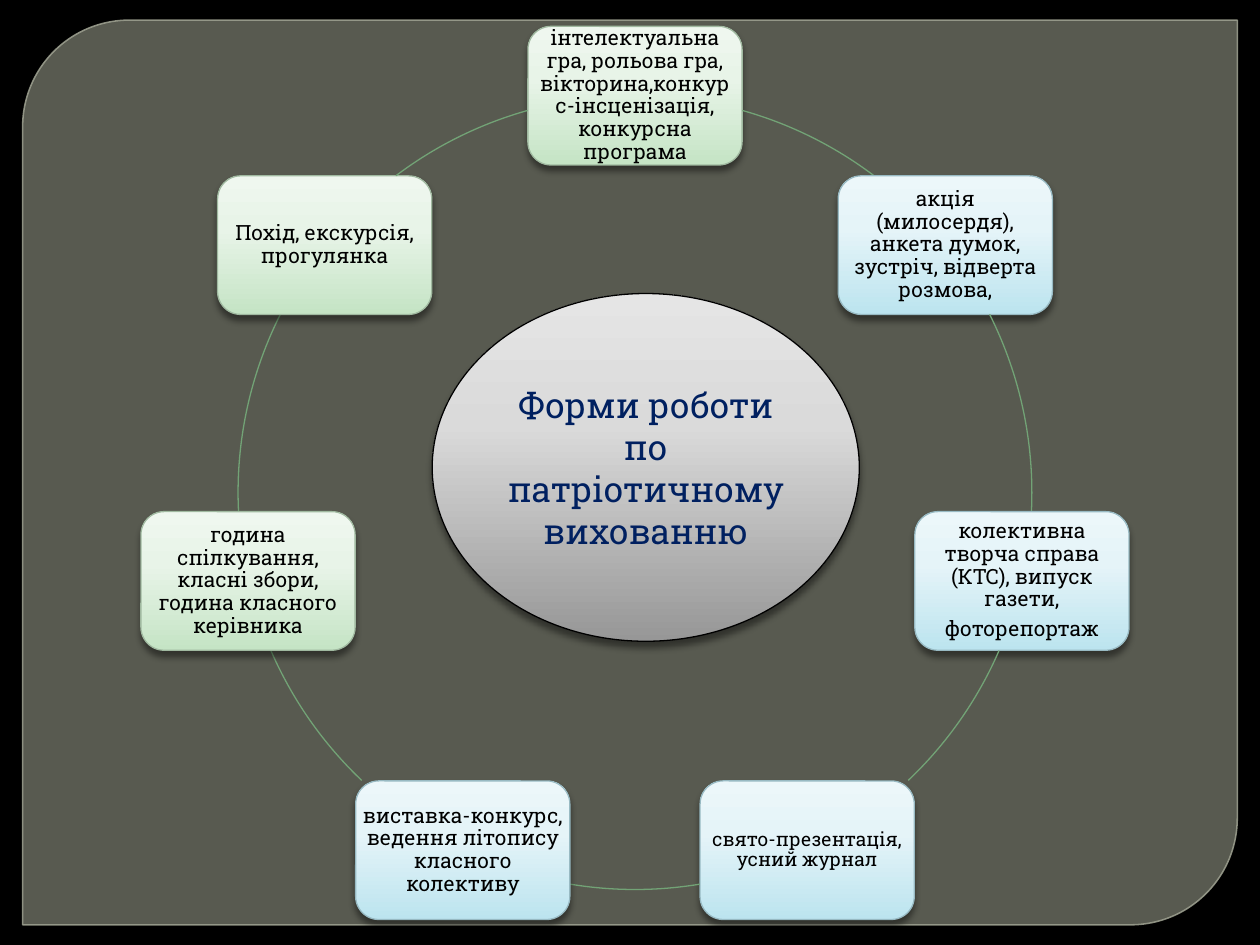
from copy import deepcopy
from math import cos, radians, sin

from pptx import Presentation
from pptx.dml.color import RGBColor
from pptx.enum.shapes import MSO_SHAPE
from pptx.enum.text import MSO_ANCHOR, PP_ALIGN
from pptx.oxml import parse_xml
from pptx.oxml.ns import nsdecls, qn
from pptx.util import Inches, Pt

# Content: node paragraphs, palette and text size, clockwise from the top
CENTER_TEXT = "Форми роботи по патріотичному вихованню"
NODES = [
    (["інтелектуальна гра, рольова гра, вікторина,конкурс-інсценізація, конкурсна програма"], "green", 12),
    (["акція (милосердя), анкета думок, зустріч, відверта розмова,"], "blue", 12),
    (["колективна творча справа (КТС), випуск газети,", "фоторепортаж"], "blue", 12),
    (["свято-презентація, усний журнал"], "blue", 11),
    (["виставка-конкурс, ведення літопису класного колективу"], "blue", 12),
    (["година спілкування, класні збори, година класного керівника"], "green", 12),
    (["Похід, екскурсія, прогулянка"], "green", 12),
]

# Colours and font
FONT = "Roboto Slab"
BLACK = RGBColor(0, 0, 0)
NAVY = RGBColor(0x00, 0x20, 0x60)
RING = RGBColor(0x72, 0xA3, 0x76)
PANEL = RGBColor(0x88, 0x8B, 0x7B)
PANEL_LINE = RGBColor(0x9D, 0xA0, 0x90)
STOP_POSITIONS = (0, 0.62, 1)
GRADIENTS = {  # stops from bottom to top
    "green": (RGBColor(0xC5, 0xE4, 0xC5), RGBColor(0xE8, 0xF4, 0xE8), RGBColor(0xEF, 0xF7, 0xEF)),
    "blue": (RGBColor(0xBC, 0xE4, 0xEF), RGBColor(0xE5, 0xF4, 0xF8), RGBColor(0xEC, 0xF7, 0xFA)),
    "gray": (RGBColor(0x97, 0x97, 0x97), RGBColor(0xDA, 0xDA, 0xDA), RGBColor(0xE5, 0xE5, 0xE5)),
}
LINES = {
    "green": RGBColor(0xA0, 0xB9, 0xA0),
    "blue": RGBColor(0x98, 0xBA, 0xC3),
    "gray": BLACK,
}

# Ring geometry, in inches
CENTER_X, CENTER_Y, RADIUS = 5.04, 3.91, 3.15
NODE_WIDTH, NODE_HEIGHT = 1.7, 1.1
STEP = 360 / len(NODES)


def ring_point(angle):
    """Point on the ring; angles run clockwise from the right."""
    return (CENTER_X + RADIUS * cos(radians(angle)),
            CENTER_Y + RADIUS * sin(radians(angle)))


def leave_node(angle, direction):
    """Angle at which the ring leaves the node centred at the given angle."""
    node_x, node_y = ring_point(angle)
    x, y = node_x, node_y
    while abs(x - node_x) < NODE_WIDTH / 2 and abs(y - node_y) < NODE_HEIGHT / 2:
        angle += 0.1 * direction
        x, y = ring_point(angle)
    return angle


def add_outline(slide, kind, box, line_color, width=0.75):
    shape = slide.shapes.add_shape(kind, *map(Inches, box))
    shape.shadow.inherit = False
    shape.line.color.rgb = line_color
    shape.line.width = Pt(width)
    return shape


def set_alpha(color_format_parent, percent):
    color = next(color_format_parent.iter(qn("a:srgbClr")))
    color.append(parse_xml(f'<a:alpha {nsdecls("a")} val="{percent * 1000}"/>'))


def add_glossy(slide, kind, box, palette):
    shape = add_outline(slide, kind, box, LINES[palette])
    shape.fill.gradient()
    shape.fill.gradient_angle = 90
    stop_list = next(shape._element.spPr.iter(qn("a:gsLst")))
    stop_list.append(deepcopy(stop_list[-1]))
    for stop, position, color in zip(shape.fill.gradient_stops, STOP_POSITIONS, GRADIENTS[palette]):
        stop.position = position
        stop.color.rgb = color
    shape._element.spPr.find(qn("a:effectLst")).append(parse_xml(
        f'<a:outerShdw {nsdecls("a")} blurRad="{Pt(4)}" dist="{Pt(3)}" dir="5400000" rotWithShape="0">'
        '<a:srgbClr val="000000"><a:alpha val="43000"/></a:srgbClr></a:outerShdw>'))
    return shape


def write_text(shape, paragraphs, size, color=BLACK, spacing=1.0, after=0, margin=None):
    frame = shape.text_frame
    frame.word_wrap = True
    frame.vertical_anchor = MSO_ANCHOR.MIDDLE
    if margin is not None:
        frame.margin_left = frame.margin_right = Inches(margin)
        frame.margin_top = frame.margin_bottom = Inches(margin)
    for index, text in enumerate(paragraphs):
        paragraph = frame.add_paragraph() if index else frame.paragraphs[0]
        paragraph.alignment = PP_ALIGN.CENTER
        paragraph.line_spacing = spacing
        paragraph.space_after = Pt(after)
        run = paragraph.add_run()
        run.text = text
        run.font.name = FONT
        run.font.size = Pt(size)
        run.font.color.rgb = color


def main():
    presentation = Presentation()
    presentation.slide_width, presentation.slide_height = Inches(10), Inches(7.5)
    slide = presentation.slides.add_slide(presentation.slide_layouts[6])
    slide.background.fill.solid()
    slide.background.fill.fore_color.rgb = BLACK

    # Translucent backing panel
    panel = add_outline(slide, MSO_SHAPE.ROUND_2_DIAG_RECTANGLE, (0.18, 0.16, 9.64, 7.18), PANEL_LINE, 0.87)
    panel.adjustments[0] = 0.118
    panel.fill.solid()
    panel.fill.fore_color.rgb = PANEL
    set_alpha(panel._element.spPr.find(qn("a:solidFill")), 65)
    set_alpha(panel._element.spPr.find(qn("a:ln")), 88)

    # Nodes, each followed by the arc to the next one
    ring_box = (CENTER_X - RADIUS, CENTER_Y - RADIUS, 2 * RADIUS, 2 * RADIUS)
    for index, (paragraphs, palette, size) in enumerate(NODES):
        angle = -90 + index * STEP
        x, y = ring_point(angle)
        box = (x - NODE_WIDTH / 2, y - NODE_HEIGHT / 2, NODE_WIDTH, NODE_HEIGHT)
        node = add_glossy(slide, MSO_SHAPE.ROUNDED_RECTANGLE, box, palette)
        write_text(node, paragraphs, size, spacing=0.9, after=4, margin=0)

        arc = add_outline(slide, MSO_SHAPE.ARC, ring_box, RING)
        arc.fill.background()
        ends = (leave_node(angle, 1), leave_node(angle + STEP, -1))
        for position, end in enumerate(ends):
            arc.adjustments[position] = end % 360 * 0.6  # 60000 units per degree, stored per 100000

    # Central topic
    topic = add_glossy(slide, MSO_SHAPE.OVAL, (3.43, 2.33, 3.39, 2.76), "gray")
    write_text(topic, [CENTER_TEXT], 20, color=NAVY)

    presentation.save("out.pptx")


if __name__ == "__main__":
    main()
